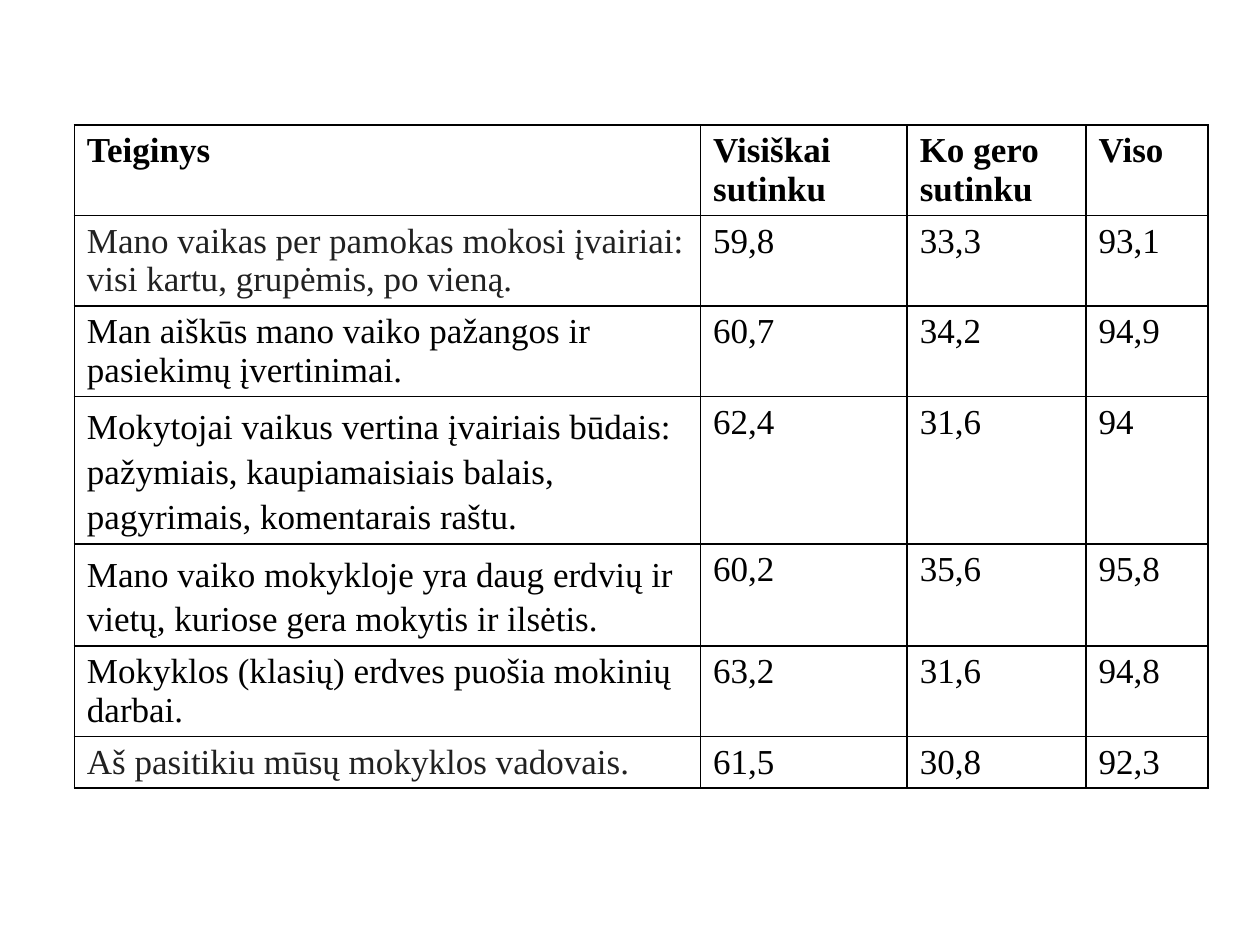
from lxml.etree import SubElement
from pptx import Presentation
from pptx.dml.color import RGBColor
from pptx.oxml.ns import qn
from pptx.util import Inches, Pt

BLACK = RGBColor(0x00, 0x00, 0x00)
GREY = RGBColor(0x21, 0x21, 0x21)
FONT = "Times New Roman"
LOOSE = {"line_spacing": 1.15, "space_after": Pt(10)}

COL_WIDTHS = [4.97, 1.64, 1.42, 0.97]
ROW_HEIGHTS = [0.72, 0.72, 0.71, 1.17, 0.8, 0.72, 0.41]
HEADER = ["Teiginys", "Visiškai sutinku", "Ko gero sutinku", "Viso"]
STATEMENTS = [
    ("Mano vaikas per pamokas mokosi įvairiai: visi kartu, grupėmis, po vieną.",
     {"color": GREY}, ["59,8", "33,3", "93,1"]),
    ("Man aiškūs mano vaiko pažangos ir pasiekimų įvertinimai.",
     {}, ["60,7", "34,2", "94,9"]),
    ("Mokytojai vaikus vertina įvairiais būdais: pažymiais, kaupiamaisiais "
     "balais, pagyrimais, komentarais raštu.",
     LOOSE, ["62,4", "31,6", "94"]),
    ("Mano vaiko mokykloje yra daug erdvių ir vietų, kuriose gera mokytis ir ilsėtis.",
     LOOSE, ["60,2", "35,6", "95,8"]),
    ("Mokyklos (klasių) erdves puošia mokinių darbai.",
     {}, ["63,2", "31,6", "94,8"]),
    ("Aš pasitikiu mūsų mokyklos vadovais.",
     {"color": GREY}, ["61,5", "30,8", "92,3"]),
]


def write(tf, text, size=20, color=BLACK, bold=False, line_spacing=None, space_after=None):
    """Write one formatted paragraph into a text frame."""
    p = tf.paragraphs[0]
    p.line_spacing, p.space_after = line_spacing, space_after
    r = p.add_run()
    r.text = text
    r.font.name, r.font.size, r.font.bold = FONT, Pt(size), bold
    r.font.color.rgb = color


def add_borders(cell, color=BLACK, width=1):
    """Draw a solid line on all four sides of a cell."""
    tcPr = cell._tc.get_or_add_tcPr()
    for i, side in enumerate(("a:lnL", "a:lnR", "a:lnT", "a:lnB")):
        ln = SubElement(tcPr, qn(side), w=str(Pt(width)))
        fill = SubElement(ln, qn("a:solidFill"))
        SubElement(fill, qn("a:srgbClr"), val=str(color))
        tcPr.insert(i, ln)


def fill_row(row, texts, formats):
    """Write a row of cells, each with its own format."""
    for cell, text, fmt in zip(row.cells, texts, formats):
        cell.fill.background()
        add_borders(cell)
        write(cell.text_frame, text, **fmt)


def add_survey_table(s, left, top):
    """Add the table of statements and percentages."""
    table = s.shapes.add_table(
        len(ROW_HEIGHTS), len(COL_WIDTHS), Inches(left), Inches(top),
        Inches(sum(COL_WIDTHS)), Inches(sum(ROW_HEIGHTS))).table
    table.first_row = table.horz_banding = False
    for col, width in zip(table.columns, COL_WIDTHS):
        col.width = Inches(width)
    for row, height in zip(table.rows, ROW_HEIGHTS):
        row.height = Inches(height)
    fill_row(table.rows[0], HEADER, [{"bold": True}] * len(HEADER))
    for i, (statement, fmt, values) in enumerate(STATEMENTS, 1):
        fill_row(table.rows[i], [statement] + values, [fmt] + [{}] * len(values))


def main():
    """Build and save the slide."""
    prs = Presentation()
    prs.slide_width, prs.slide_height = Inches(10), Inches(7.5)
    s = prs.slides.add_slide(prs.slide_layouts[6])
    add_survey_table(s, 0.59, 0.99)
    prs.save("out.pptx")


if __name__ == "__main__":
    main()
